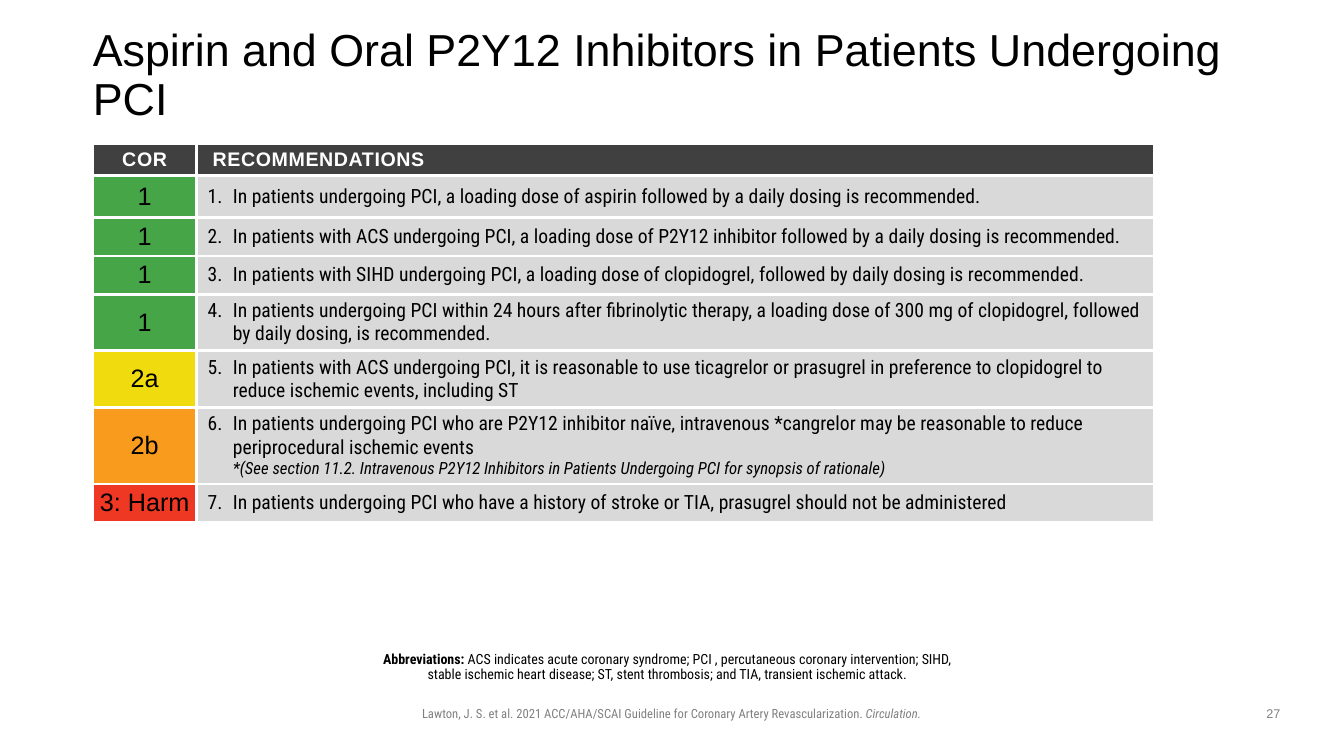
"""Build the slide on aspirin and oral P2Y12 inhibitors in patients undergoing PCI."""
from dataclasses import dataclass

from lxml.etree import SubElement
from pptx import Presentation
from pptx.dml.color import RGBColor
from pptx.enum.text import MSO_ANCHOR, MSO_AUTO_SIZE, PP_ALIGN
from pptx.oxml.ns import qn
from pptx.slide import Slide
from pptx.table import Table, _Cell
from pptx.text.text import TextFrame, _Paragraph
from pptx.util import Inches, Pt

BLACK = RGBColor(0x00, 0x00, 0x00)
WHITE = RGBColor(0xFF, 0xFF, 0xFF)
GRAY = RGBColor(0x80, 0x80, 0x80)
CHARCOAL = RGBColor(0x40, 0x40, 0x40)
PALE_GRAY = RGBColor(0xD9, 0xD9, 0xD9)
GREEN = RGBColor(0x46, 0xA5, 0x47)
YELLOW = RGBColor(0xF0, 0xDB, 0x0E)
ORANGE = RGBColor(0xF9, 0x9B, 0x1D)
RED = RGBColor(0xEE, 0x38, 0x23)

SANS = "Arial"
CONDENSED = "Roboto Condensed"

TITLE_FORMAT = {"name": SANS, "size": Pt(32), "bold": False}
HEADER_FORMAT = {"name": SANS, "size": Pt(14), "bold": True}
CLASS_FORMAT = {"name": SANS, "size": Pt(18), "bold": False}
ADVICE_FORMAT = {"name": CONDENSED, "size": Pt(14), "bold": False}
REMARK_FORMAT = ADVICE_FORMAT | {"size": Pt(12), "italic": True}
ABBREVIATION_FORMAT = {"name": CONDENSED, "size": Pt(10)}
CITATION_FORMAT = {"name": CONDENSED, "size": Pt(9)}
NUMBER_FORMAT = {"name": SANS, "size": Pt(9)}


@dataclass(frozen=True)
class Recommendation:
    """One row of the table."""

    strength: str
    color: RGBColor
    height: float
    advice: str
    remark: str = ""


@dataclass(frozen=True)
class Span:
    """A stretch of text in one format."""

    text: str
    style: dict
    color: RGBColor = BLACK


@dataclass(frozen=True)
class Note:
    """A centred line of text below the table."""

    box: tuple[float, float, float, float]
    insets: tuple[float, float, float, float]
    line_spacing: float
    spans: tuple[Span, ...]


RECOMMENDATIONS = [
    Recommendation("1", GREEN, 0.42, "In patients undergoing PCI, a loading dose of aspirin "
                   "followed by a daily dosing is recommended."),
    Recommendation("1", GREEN, 0.38, "In patients with ACS undergoing PCI, a loading dose of "
                   "P2Y12 inhibitor followed by a daily dosing is recommended."),
    Recommendation("1", GREEN, 0.38, "In patients with SIHD undergoing PCI, a loading dose of "
                   "clopidogrel, followed by daily dosing is recommended."),
    Recommendation("1", GREEN, 0.56, "In patients undergoing PCI within 24 hours after "
                   "fibrinolytic therapy, a loading dose of 300 mg of clopidogrel, followed by "
                   "daily dosing, is recommended."),
    Recommendation("2a", YELLOW, 0.56, "In patients with ACS undergoing PCI, it is reasonable to "
                   "use ticagrelor or prasugrel in preference to clopidogrel to reduce ischemic "
                   "events, including ST"),
    Recommendation("2b", ORANGE, 0.76, "In patients undergoing PCI who are P2Y12 inhibitor naïve, "
                   "intravenous *cangrelor may be reasonable to reduce periprocedural ischemic "
                   "events", "*(See section 11.2. Intravenous P2Y12 Inhibitors in Patients "
                   "Undergoing PCI for synopsis of rationale)"),
    Recommendation("3: Harm", RED, 0.38, "In patients undergoing PCI who have a history of stroke "
                   "or TIA, prasugrel should not be administered"),
]

NOTES = [
    Note((3.17, 6.95, 6.98, 0.25), (0.1, 0.05, 0.1, 0.05), 1.0, (
        Span("Lawton, J. S. et al. 2021 ACC/AHA/SCAI Guideline for Coronary Artery "
             "Revascularization. ", CITATION_FORMAT, GRAY),
        Span("Circulation.", CITATION_FORMAT | {"italic": True}, GRAY))),
    Note((3.77, 6.42, 5.79, 0.4), (0, 0.05, 0.1, 0.05), 0.9, (
        Span("Abbreviations: ", ABBREVIATION_FORMAT | {"bold": True}),
        Span("ACS indicates acute coronary syndrome; PCI , percutaneous coronary intervention; "
             "SIHD, stable ischemic heart disease; ST, stent thrombosis; and TIA, transient "
             "ischemic attack.", ABBREVIATION_FORMAT))),
    Note((12.42, 6.95, 0.42, 0.26), (0.1, 0.05, 0.1, 0.05), 1.0,
         (Span("27", NUMBER_FORMAT, GRAY),)),
]


def add_span(paragraph: _Paragraph, span: Span, tracking: float = 0) -> None:
    """Add a formatted run, with letter spacing in points."""
    run = paragraph.add_run()
    run.text = span.text
    for attribute, value in span.style.items():
        setattr(run.font, attribute, value)
    run.font.color.rgb = span.color
    if tracking:
        run.font._element.set("spc", str(round(tracking * 100)))


def set_insets(frame: TextFrame, insets: tuple[float, float, float, float]) -> None:
    """Set the left, top, right and bottom insets."""
    for side, inset in zip(("left", "top", "right", "bottom"), insets):
        setattr(frame, f"margin_{side}", Inches(inset))


def set_indent(paragraph: _Paragraph, left: float, first: float = 0) -> None:
    """Set the left margin and the first-line indent."""
    properties = paragraph._p.get_or_add_pPr()
    properties.set("marL", str(Inches(left)))
    properties.set("indent", str(Inches(first)))


def style_cell(cell: _Cell, fill: RGBColor, inset: float) -> _Paragraph:
    """Give a cell white borders, a fill and insets, and return its paragraph."""
    properties = cell._tc.get_or_add_tcPr()
    for side in ("lnL", "lnR", "lnT", "lnB"):
        border = SubElement(properties, qn(f"a:{side}"), w=str(Pt(2.25)))
        SubElement(SubElement(border, qn("a:solidFill")), qn("a:srgbClr"), val=str(WHITE))
    cell.fill.solid()
    cell.fill.fore_color.rgb = fill
    cell.vertical_anchor = MSO_ANCHOR.MIDDLE
    set_insets(cell, (inset, 0.05, inset, 0.05))
    return cell.text_frame.paragraphs[0]


def fill_header(table: Table) -> None:
    """Write the two column headings."""
    strength = style_cell(table.cell(0, 0), CHARCOAL, 0.1)
    strength.alignment = PP_ALIGN.CENTER
    add_span(strength, Span("COR", HEADER_FORMAT, WHITE), 0.5)
    advice = style_cell(table.cell(0, 1), CHARCOAL, 0.1)
    set_indent(advice, 0.06)
    add_span(advice, Span("RECOMMENDATIONS", HEADER_FORMAT, WHITE), 0.4)


def fill_row(table: Table, number: int, item: Recommendation) -> None:
    """Write one numbered recommendation."""
    table.rows[number].height = Inches(item.height)
    strength = style_cell(table.cell(number, 0), item.color, 0.05)
    strength.alignment = PP_ALIGN.CENTER
    add_span(strength, Span(item.strength, CLASS_FORMAT))
    advice = style_cell(table.cell(number, 1), PALE_GRAY, 0.05)
    set_indent(advice, 0.31, -0.25)
    SubElement(advice._p.get_or_add_pPr(), qn("a:buAutoNum"),
               type="arabicPeriod", startAt=str(number))
    add_span(advice, Span(item.advice, ADVICE_FORMAT))
    if item.remark:
        advice.add_line_break()
        add_span(advice, Span(item.remark, REMARK_FORMAT))


def add_recommendations(slide: Slide) -> None:
    """Add the table of recommendations."""
    table = slide.shapes.add_table(len(RECOMMENDATIONS) + 1, 2, Inches(0.92), Inches(1.42),
                                   Inches(10.53), Inches(3.76)).table
    table.horz_banding = False
    for column, width in zip(table.columns, (1.03, 9.5)):
        column.width = Inches(width)
    table.rows[0].height = Inches(0.32)
    fill_header(table)
    for number, item in enumerate(RECOMMENDATIONS, start=1):
        fill_row(table, number, item)


def add_title(slide: Slide) -> None:
    """Place and format the title."""
    title = slide.shapes.title
    title.left, title.top, title.width, title.height = map(Inches, (0.92, 0.4, 11.5, 0.72))
    frame = title.text_frame
    frame.auto_size = MSO_AUTO_SIZE.NONE
    frame.vertical_anchor = MSO_ANCHOR.MIDDLE
    set_insets(frame, (0, 0, 0, 0))
    heading = frame.paragraphs[0]
    heading.alignment = PP_ALIGN.LEFT
    heading.line_spacing = 0.9
    add_span(heading, Span("Aspirin and Oral P2Y12 Inhibitors in Patients Undergoing PCI",
                           TITLE_FORMAT))


def add_note(slide: Slide, note: Note) -> None:
    """Add one centred note."""
    frame = slide.shapes.add_textbox(*map(Inches, note.box)).text_frame
    frame.word_wrap = True
    set_insets(frame, note.insets)
    paragraph = frame.paragraphs[0]
    paragraph.alignment = PP_ALIGN.CENTER
    paragraph.line_spacing = note.line_spacing
    for span in note.spans:
        add_span(paragraph, span)


def main() -> None:
    """Build and save the presentation."""
    presentation = Presentation()
    presentation.slide_width, presentation.slide_height = Inches(13.33), Inches(7.5)
    slide = presentation.slides.add_slide(presentation.slide_layouts.get_by_name("Title Only"))
    add_title(slide)
    add_recommendations(slide)
    for note in NOTES:
        add_note(slide, note)
    presentation.save("out.pptx")


if __name__ == "__main__":
    main()
